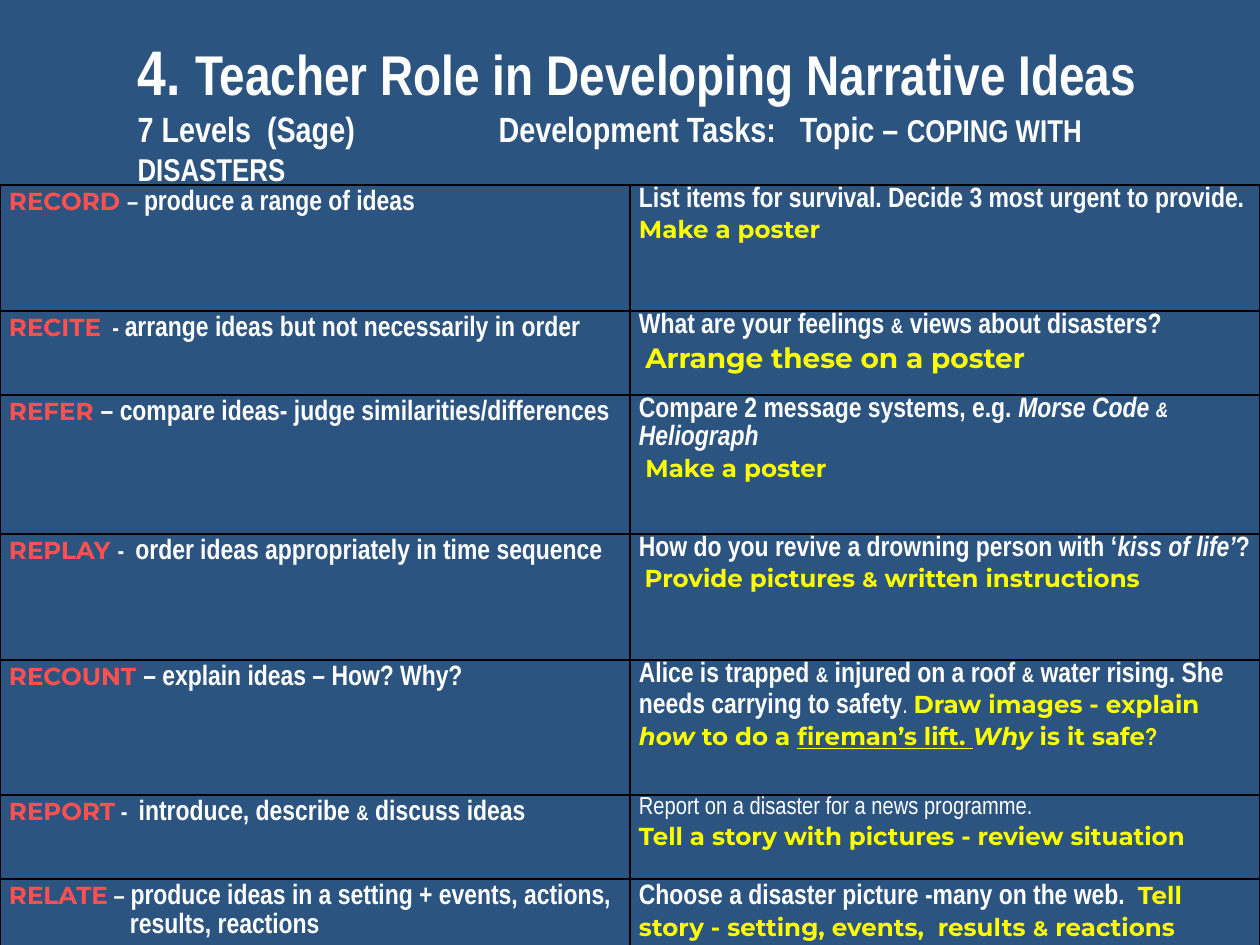
from lxml.etree import SubElement
from pptx import Presentation
from pptx.dml.color import RGBColor
from pptx.enum.text import MSO_ANCHOR, MSO_AUTO_SIZE, PP_ALIGN
from pptx.oxml.ns import qn
from pptx.util import Emu, Pt

SCALE = 914400 / 126  # EMU in one px
WHITE = RGBColor(0xFF, 0xFF, 0xFF)
YELLOW = RGBColor(0xFF, 0xFF, 0x00)
CORAL = RGBColor(0xFF, 0x50, 0x50)
NAVY = RGBColor(0x2B, 0x54, 0x81)
BORDER_HEX = "000000"
NARROW, ACCENT = "Arial Narrow", "Montserrat"


def px(length):
    return Emu(round(length * SCALE))


def style(size, name=NARROW, color=WHITE, **extra):
    return {"size": Pt(size), "name": name, "color": color, "bold": True, **extra}


NUMBER, HEADING, SUBHEADING, TOPIC = style(36), style(32), style(20), style(18)
LEVEL = style(14, ACCENT, CORAL)
BODY, DASH, AMPERSAND = style(16), style(14), style(12)
PLAIN = style(14, bold=False)
ITALIC, ITALIC_AMPERSAND = style(16, italic=True), style(12, italic=True)
TASK, BIG_TASK = style(14, ACCENT, YELLOW), style(16, ACCENT, YELLOW)
TASK_AMPERSAND = style(12, ACCENT, YELLOW)
TASK_ITALIC = style(14, ACCENT, YELLOW, italic=True)
TASK_UNDERLINE = style(14, ACCENT, YELLOW, underline=True)
TASK_MARK = style(14, NARROW, YELLOW)

# Each row: height in px, level paragraphs, task paragraphs
ROWS = [
    (126,
     [[("RECORD ", LEVEL), ("– ", DASH), ("produce a range of ideas", BODY)]],
     [[("List items for survival. Decide 3 most urgent to provide. ", BODY),
       ("Make a poster", TASK)]]),
    (84,
     [[("RECITE", LEVEL), ("  - ", DASH),
       ("arrange ideas but not necessarily in order", BODY)]],
     [[("What are your feelings ", BODY), ("&", AMPERSAND),
       (" views about disasters?", BODY)],
      [(" ", BODY), ("Arrange these on a poster", BIG_TASK)]]),
    (139,
     [[("REFER ", LEVEL), ("– compare ideas- judge similarities/differences", BODY)]],
     [[("Compare 2 message systems, e.g. ", BODY), ("Morse Code ", ITALIC),
       ("&", ITALIC_AMPERSAND)],
      [("Heliograph", ITALIC)],
      [(" ", BODY), ("Make a poster", TASK)]]),
    (126,
     [[("REPLAY ", LEVEL), ("-  ", DASH),
       ("order ideas appropriately in time sequence", BODY)]],
     [[("How do you revive a drowning person with ‘", BODY),
       ("kiss of life’", ITALIC), ("?", BODY)],
      [(" ", DASH), ("Provide pictures ", TASK), ("&", TASK_AMPERSAND),
       (" written instructions", TASK)]]),
    (135,
     [[("RECOUNT ", LEVEL), ("– explain ideas – How? Why?", BODY)]],
     [[("Alice is trapped ", BODY), ("&", AMPERSAND),
       (" injured on a roof ", BODY), ("&", AMPERSAND),
       (" water rising. She needs carrying to safety", BODY), (". ", PLAIN),
       ("Draw images - explain ", TASK), ("how ", TASK_ITALIC),
       ("to do a ", TASK), ("fireman’s lift. ", TASK_UNDERLINE),
       ("Why", TASK_ITALIC), (" is it safe", TASK), ("?", TASK_MARK)]]),
    (84,
     [[("REPORT", LEVEL), (" -  ", DASH), ("introduce, describe ", BODY),
       ("&", AMPERSAND), (" discuss ideas", BODY)]],
     [[("Report on a disaster for a news programme.", PLAIN)],
      [("Tell a story with pictures - review situation", TASK)]]),
    (84,
     [[("RELATE", LEVEL), (" – ", DASH),
       ("produce ideas in a setting + events, actions,", BODY)],
      [("results, reactions", BODY)]],
     [[("Choose a disaster picture -many on the web.  ", BODY),
       ("Tell story - setting, events,  results ", TASK),
       ("&", TASK_AMPERSAND), (" reactions", TASK)]]),
]


def write(frame, paragraphs, line_spacing=1.0):
    """Fill a text frame with paragraphs made of (text, style) runs."""
    for index, runs in enumerate(paragraphs):
        paragraph = frame.paragraphs[0] if index == 0 else frame.add_paragraph()
        paragraph.alignment = PP_ALIGN.LEFT
        paragraph.line_spacing = line_spacing
        for text, values in runs:
            run = paragraph.add_run()
            run.text = text
            for key, value in values.items():
                if key == "color":
                    run.font.color.rgb = value
                else:
                    setattr(run.font, key, value)


def indent(paragraph, length):
    properties = paragraph._p.get_or_add_pPr()
    properties.set("marL", str(px(length)))
    properties.set("indent", "0")


def add_border(cell):
    properties = cell._tc.get_or_add_tcPr()
    for index, side in enumerate(("lnL", "lnR", "lnT", "lnB")):
        line = properties.makeelement(qn(f"a:{side}"), {"w": str(Pt(1))})
        fill = SubElement(line, qn("a:solidFill"))
        SubElement(fill, qn("a:srgbClr"), val=BORDER_HEX)
        properties.insert(index, line)


def place_title(slide, left, top, width, height):
    title = slide.shapes.title
    title.left, title.top = px(left), px(top)
    title.width, title.height = px(width), px(height)
    frame = title.text_frame
    frame.word_wrap = True
    frame.auto_size = MSO_AUTO_SIZE.SHAPE_TO_FIT_TEXT
    frame.vertical_anchor = MSO_ANCHOR.TOP
    write(frame, [
        [("4. ", NUMBER), ("Teacher Role in Developing Narrative Ideas", HEADING)],
        [("7 Levels  (Sage)\tDevelopment Tasks:   Topic – ", SUBHEADING),
         ("COPING WITH DISASTERS", TOPIC)],
    ])
    heading, columns = frame.paragraphs
    indent(heading, 71)
    tabs = SubElement(columns._p.get_or_add_pPr(), qn("a:tabLst"))
    SubElement(tabs, qn("a:tab"), pos=str(px(361)), algn="l")


def place_table(slide, left, top, width):
    height = sum(row[0] for row in ROWS)
    table = slide.shapes.add_table(
        len(ROWS), 2, px(left), px(top), px(width), px(height)).table
    table.first_row = table.horz_banding = False
    for table_row, (row_height, *contents) in zip(table.rows, ROWS):
        table_row.height = px(row_height)
        for cell, paragraphs in zip(table_row.cells, contents):
            cell.margin_left = cell.margin_right = px(9)
            cell.margin_top = cell.margin_bottom = 0
            cell.fill.background()
            add_border(cell)
            write(cell.text_frame, paragraphs, 1.07)
    # The last level continues under its description
    indent(table.cell(len(ROWS) - 1, 0).text_frame.paragraphs[1], 121)


def main():
    presentation = Presentation()
    presentation.slide_width, presentation.slide_height = px(1260), px(945)
    slide = presentation.slides.add_slide(presentation.slide_layouts[5])
    slide.background.fill.solid()
    slide.background.fill.fore_color.rgb = NAVY
    place_table(slide, 0, 185, 1260)
    place_title(slide, 54, 26, 1134, 131)
    presentation.save("out.pptx")


if __name__ == "__main__":
    main()
